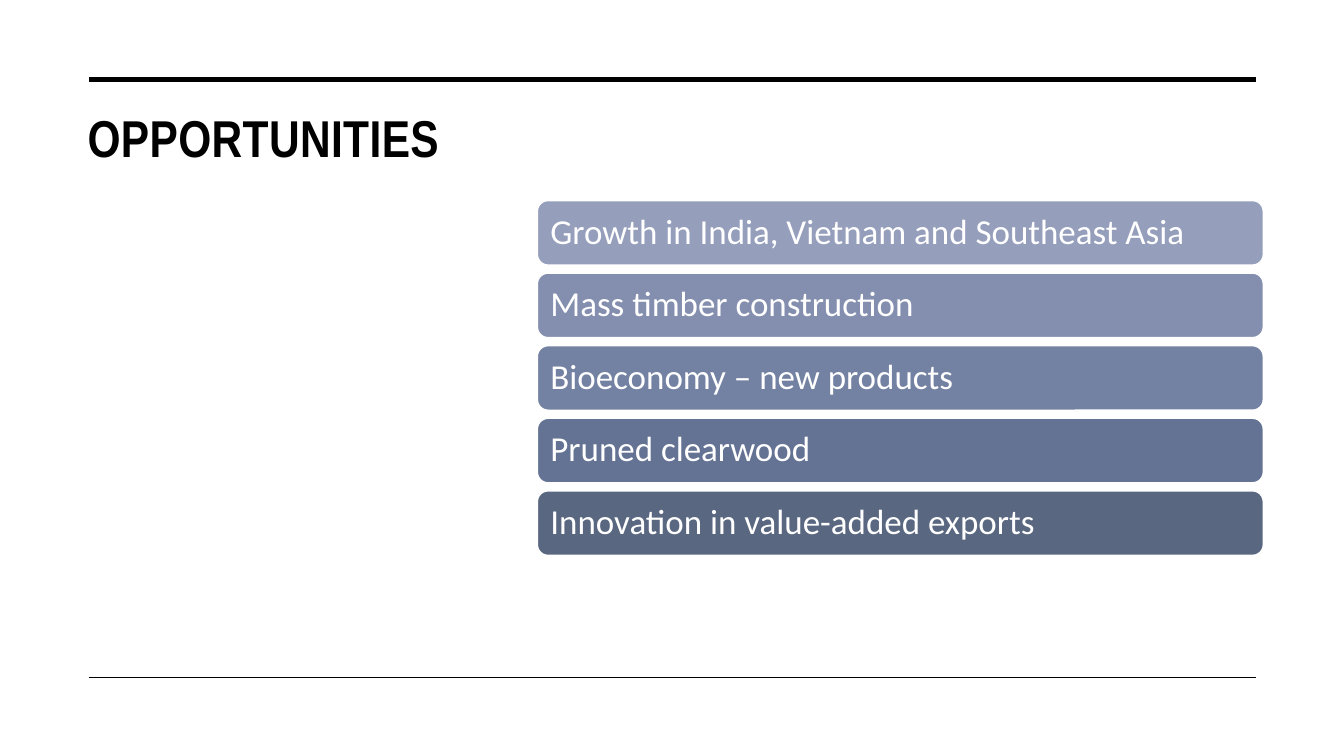
from lxml.etree import SubElement
from pptx import Presentation
from pptx.dml.color import RGBColor
from pptx.enum.shapes import MSO_CONNECTOR, MSO_SHAPE
from pptx.enum.text import MSO_ANCHOR, PP_ALIGN
from pptx.oxml.ns import qn
from pptx.util import Inches, Pt

BLACK = RGBColor(0x00, 0x00, 0x00)
WHITE = RGBColor(0xFF, 0xFF, 0xFF)
OPPORTUNITIES = [
    ("Growth in India, Vietnam and Southeast Asia", RGBColor(0x95, 0x9E, 0xBB)),
    ("Mass timber construction", RGBColor(0x84, 0x8F, 0xAF)),
    ("Bioeconomy – new products", RGBColor(0x73, 0x81, 0xA2)),
    ("Pruned clearwood", RGBColor(0x64, 0x73, 0x94)),
    ("Innovation in value-added exports", RGBColor(0x59, 0x67, 0x81)),
]
BAR_TOP, BAR_PITCH = 1.99, 0.72
RULE_LEFT, RULE_RIGHT = 0.88, 12.46


class SlideBuilder:
    title_font = "Arial Narrow"
    body_font = "Calibri"

    def __init__(self, slide):
        self.slide = slide

    def style(self, p, font, size, color, bold=False):
        p.alignment = PP_ALIGN.LEFT
        p.font.name = font
        p.font.size = Pt(size)
        p.font.color.rgb = color
        p.font.bold = bold

    def title(self, text):
        s = self.slide.shapes.add_textbox(Inches(0.77), Inches(1), Inches(4), Inches(4.82))
        tf = s.text_frame
        tf.word_wrap = True
        p = tf.paragraphs[0]
        r = p.add_run()
        r.text = text
        r._r.get_or_add_rPr().set("spc", "30")
        self.style(p, self.title_font, 37, BLACK, bold=True)

    def rule(self, y, width):
        """Draw a horizontal line across the content area."""
        s = self.slide.shapes.add_connector(
            MSO_CONNECTOR.STRAIGHT,
            Inches(RULE_LEFT), Inches(y), Inches(RULE_RIGHT), Inches(y))
        s.line.color.rgb = BLACK
        s.line.width = Pt(width)
        SubElement(s._element.spPr, qn("a:effectLst"))

    def bar(self, top, text, color):
        s = self.slide.shapes.add_shape(
            MSO_SHAPE.ROUNDED_RECTANGLE,
            Inches(5.33), Inches(top), Inches(7.2), Inches(0.64))
        s.shadow.inherit = False
        s.fill.solid()
        s.fill.fore_color.rgb = color
        s.line.color.rgb = WHITE
        s.line.width = Pt(1)
        tf = s.text_frame
        tf.word_wrap = True
        tf.vertical_anchor = MSO_ANCHOR.MIDDLE
        tf.margin_left = tf.margin_right = Inches(0.1)
        p = tf.paragraphs[0]
        p.text = text
        p.line_spacing = 0.9
        self.style(p, self.body_font, 25, WHITE)


def main():
    prs = Presentation()
    prs.slide_width, prs.slide_height = Inches(13.33), Inches(7.5)
    builder = SlideBuilder(prs.slides.add_slide(prs.slide_layouts[6]))
    builder.title("OPPORTUNITIES")
    builder.rule(0.79, 3.5)
    builder.rule(6.72, 1)
    for i, (text, color) in enumerate(OPPORTUNITIES):
        builder.bar(BAR_TOP + i * BAR_PITCH, text, color)
    prs.save("out.pptx")


if __name__ == "__main__":
    main()
